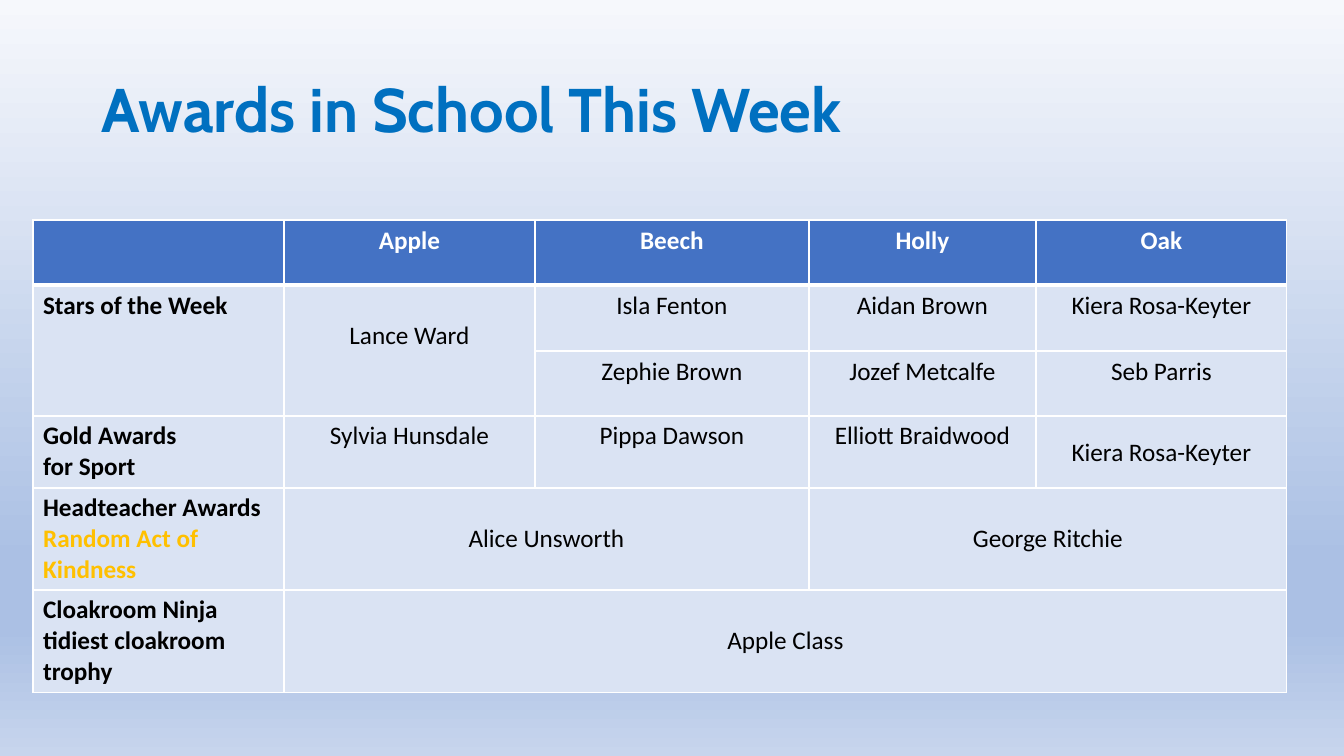
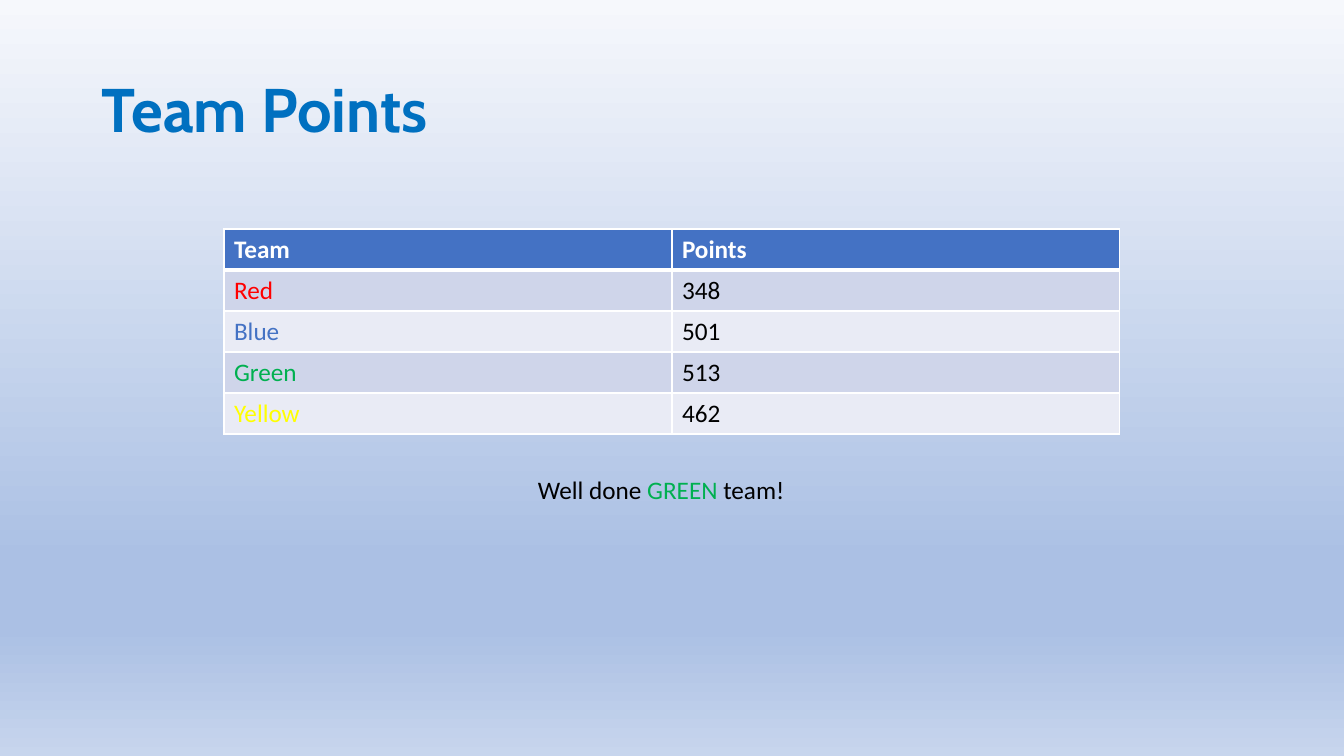
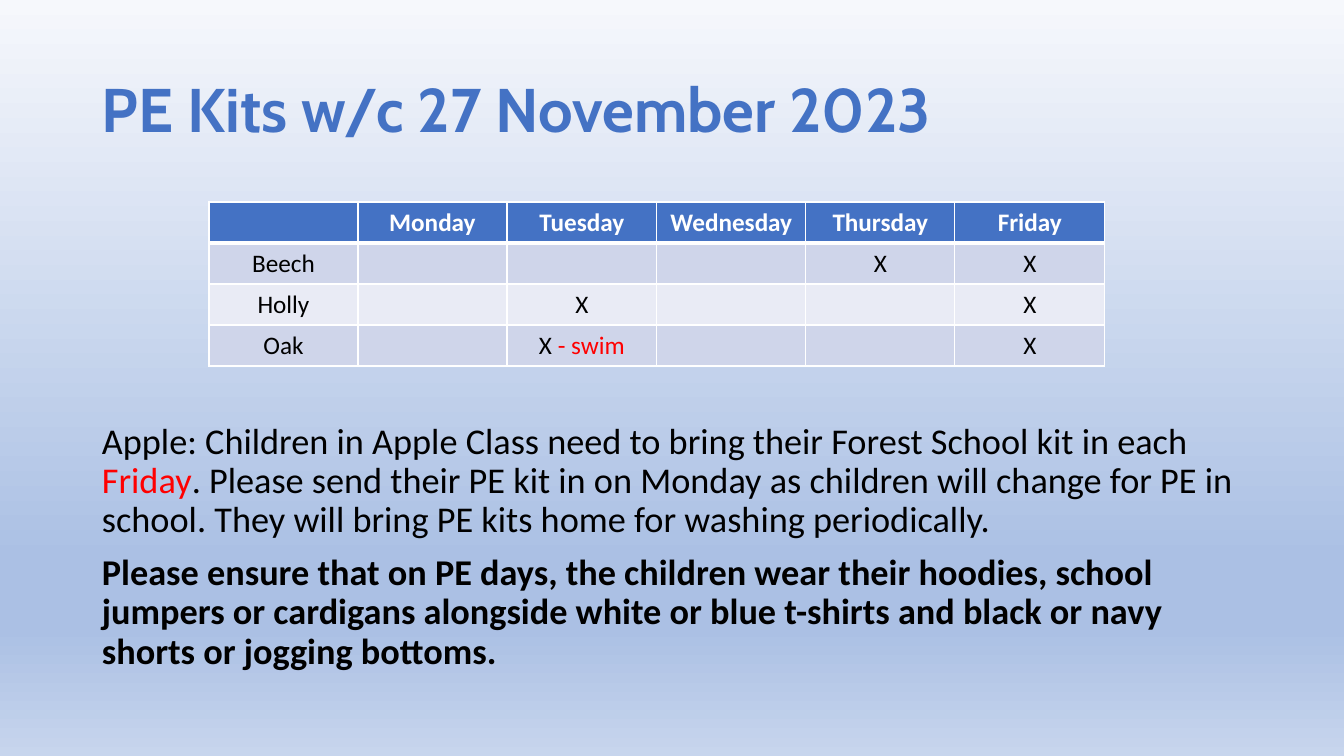
from copy import deepcopy
from dataclasses import dataclass
from typing import Optional

from lxml.etree import SubElement
from pptx import Presentation
from pptx.dml.color import RGBColor
from pptx.enum.text import MSO_ANCHOR as Anchor, PP_ALIGN as Align
from pptx.oxml.ns import qn
from pptx.util import Emu, Pt

SLIDE_W, SLIDE_H = 1344, 756
EMU_PER_PX = 12192000 / SLIDE_W

WHITE = RGBColor(0xFF, 0xFF, 0xFF)
BLACK = RGBColor(0x00, 0x00, 0x00)
RED = RGBColor(0xFF, 0x00, 0x00)
GREEN = RGBColor(0x00, 0xB0, 0x50)
YELLOW = RGBColor(0xFF, 0xFF, 0x00)
GOLD = RGBColor(0xFF, 0xC0, 0x00)
BLUE = RGBColor(0x44, 0x72, 0xC4)
TITLE_BLUE = RGBColor(0x00, 0x70, 0xC0)
PALE_BLUE = RGBColor(0xDA, 0xE3, 0xF3)
BAND_DARK = RGBColor(0xCF, 0xD5, 0xEA)
BAND_LIGHT = RGBColor(0xE9, 0xEB, 0xF5)
SKY = (
    (0, RGBColor(0xF6, 0xF8, 0xFC)),
    (74, RGBColor(0xAB, 0xC0, 0xE4)),
    (83, RGBColor(0xAB, 0xC0, 0xE4)),
    (100, RGBColor(0xC7, 0xD5, 0xED)),
)
TITLE_FONT, BODY_FONT = "Cabin", "Calibri"


@dataclass(frozen=True)
class Run:
    text: str
    color: RGBColor = BLACK


@dataclass(frozen=True)
class Para:
    runs: tuple[Run, ...]
    size: float = 18
    bold: bool = False
    font: str = BODY_FONT
    align: Align = Align.LEFT
    spacing: Optional[float] = None
    before: Optional[float] = None


@dataclass(frozen=True)
class Box:
    x: int
    y: int
    w: int
    h: int


@dataclass(frozen=True)
class Cell:
    paras: tuple[Para, ...] = ()
    drop: int = 0
    rows: int = 1
    cols: int = 1


@dataclass(frozen=True)
class Grid:
    x: int
    y: int
    cols: tuple[int, ...]
    rows: tuple[int, ...]
    cells: list[list[Optional[Cell]]]
    bands: tuple[RGBColor, ...]
    first_col: bool = False


TITLE_BOX = Box(92, 40, 1159, 146)


def px(n: int) -> Emu:
    return Emu(round(n * EMU_PER_PX))


def write(tf, paras: tuple[Para, ...]) -> None:
    for i, para in enumerate(paras):
        p = tf.paragraphs[0] if i == 0 else tf.add_paragraph()
        p.alignment = para.align
        p.font.name, p.font.size, p.font.bold = para.font, Pt(para.size), para.bold
        if para.spacing:
            p.line_spacing = para.spacing
        if para.before:
            p.space_before = Pt(para.before)
        for run in para.runs:
            r = p.add_run()
            r.text = run.text
            r.font.color.rgb = run.color


def add_text(s, box: Box, *paras: Para, anchor: Anchor = Anchor.TOP) -> None:
    sp = s.shapes.add_textbox(px(box.x), px(box.y), px(box.w), px(box.h))
    tf = sp.text_frame
    tf.word_wrap = True
    tf.vertical_anchor = anchor
    write(tf, paras)


def add_slide(prs, title: str, color: RGBColor = TITLE_BLUE):
    s = prs.slides.add_slide(prs.slide_layouts[6])
    heading = Para((Run(title, color),), 44, True, TITLE_FONT, spacing=0.9)
    add_text(s, TITLE_BOX, heading, anchor=Anchor.MIDDLE)
    return s


def set_borders(cell, top: int, bottom: int) -> None:
    tc_pr = cell._tc.get_or_add_tcPr()
    for side, width in (("L", 1), ("R", 1), ("T", top), ("B", bottom)):
        ln = SubElement(tc_pr, qn(f"a:ln{side}"), w=str(Pt(width)))
        fill = SubElement(ln, qn("a:solidFill"))
        SubElement(fill, qn("a:srgbClr"), val=str(WHITE))


def add_grid(s, grid: Grid) -> None:
    frame = s.shapes.add_table(
        len(grid.rows), len(grid.cols), px(grid.x), px(grid.y),
        px(sum(grid.cols)), px(sum(grid.rows)),
    )
    table = frame.table
    table.horz_banding = False
    table.first_col = grid.first_col
    for col, w in zip(table.columns, grid.cols):
        col.width = px(w)
    for row, h in zip(table.rows, grid.rows):
        row.height = px(h)
    for i, line in enumerate(grid.cells):
        for j, item in enumerate(line):
            cell = table.cell(i, j)
            set_borders(cell, 3 if i == 1 else 1, 3 if i == 0 else 1)
            cell.fill.solid()
            cell.fill.fore_color.rgb = BLUE if i == 0 else grid.bands[(i - 1) % len(grid.bands)]
            if item is None:
                continue
            if item.rows * item.cols > 1:
                cell.merge(table.cell(i + item.rows - 1, j + item.cols - 1))
            if item.drop:
                cell.margin_top = px(5 + item.drop)
            write(cell.text_frame, item.paras)


def head(text: str, align: Align = Align.CENTER) -> Cell:
    return Cell((Para((Run(text, WHITE),), bold=True, align=align),) if text else ())


def label(*lines: tuple[Run, ...]) -> Cell:
    return Cell(tuple(Para(runs, bold=True) for runs in lines))


def mid(*runs: Run, drop: int = 0, rows: int = 1, cols: int = 1) -> Cell:
    return Cell((Para(runs, align=Align.CENTER),) if runs else (), drop, rows, cols)


def name(text: str, drop: int = 0, rows: int = 1, cols: int = 1) -> Cell:
    return mid(Run(text), drop=drop, rows=rows, cols=cols)


def left(text: str, color: RGBColor = BLACK) -> Cell:
    return Cell((Para((Run(text, color),)),))


def set_background(prs) -> None:
    fill = prs.slide_master.background.fill
    fill.gradient()
    fill.gradient_angle = 270
    stops = prs.slide_master.element.find(".//" + qn("p:bg")).find(".//" + qn("a:gsLst"))
    for stop in list(stops):
        stops.remove(stop)
    for pos, color in SKY:
        gs = SubElement(stops, qn("a:gs"), pos=str(pos * 1000))
        SubElement(gs, qn("a:srgbClr"), val=str(color))


def awards_slide(prs) -> None:
    s = add_slide(prs, "Awards in School This Week")
    stars = label((Run("Stars of the Week"),))
    cells = [
        [head(t) for t in ("", "Apple", "Beech", "Holly", "Oak")],
        [Cell(stars.paras, rows=2), name("Lance Ward", 31, rows=2),
         name("Isla Fenton"), name("Aidan Brown"), name("Kiera Rosa-Keyter")],
        [None, None, name("Zephie Brown"), name("Jozef Metcalfe"), name("Seb Parris")],
        [label((Run("Gold Awards"),), (Run("for Sport"),)), name("Sylvia Hunsdale"),
         name("Pippa Dawson"), name("Elliott Braidwood"), name("Kiera Rosa-Keyter", 17)],
        [label((Run("Headteacher Awards "), Run("Random Act of Kindness", GOLD))),
         name("Alice Unsworth", 31, cols=2), None, name("George Ritchie", 31, cols=2), None],
        [label((Run("Cloakroom Ninja tidiest cloakroom trophy"),)),
         name("Apple Class", 31, cols=4), None, None, None],
    ]
    add_grid(s, Grid(33, 220, (251, 251, 274, 227, 251), (65, 66, 65, 72, 102, 103),
                     cells, (PALE_BLUE,), first_col=True))


def points_slide(prs) -> None:
    s = add_slide(prs, "Team Points")
    scores = (("Red", RED, 348), ("Blue", BLUE, 501), ("Green", GREEN, 513), ("Yellow", YELLOW, 462))
    cells = [[head(t, Align.LEFT) for t in ("Team", "Points")]]
    cells += [[left(team, color), left(str(points))] for team, color, points in scores]
    add_grid(s, Grid(224, 229, (448,) * 2, (41,) * 5, cells, (BAND_DARK, BAND_LIGHT)))
    add_text(s, Box(528, 469, 287, 40),
             Para((Run("Well done "), Run("GREEN", GREEN), Run(" team!"))))


def kits_slide(prs) -> None:
    s = add_slide(prs, "PE Kits w/c 27 November 2023", BLUE)
    days = ("Monday", "Tuesday", "Wednesday", "Thursday", "Friday")
    x = (Run("X"),)
    swim = (Run("X "), Run("- swim", RED))
    kits = {
        "Beech": {"Thursday": x, "Friday": x},
        "Holly": {"Tuesday": x, "Friday": x},
        "Oak": {"Tuesday": swim, "Friday": x},
    }
    cells = [[head(t) for t in ("", *days)]]
    cells += [[name(group), *(mid(*marks.get(day, ())) for day in days)]
              for group, marks in kits.items()]
    add_text(
        s, Box(92, 418, 1159, 263),
        Para((Run("Apple: Children in Apple Class need to bring their Forest School kit in each "),
              Run("Friday", RED),
              Run(". Please send their PE kit in on Monday as children will change for PE in school. "
                  "They will bring PE kits home for washing periodically.")),
             25.9, spacing=0.9),
        Para((Run("Please ensure that on PE days, the children wear their hoodies, school jumpers or "
                  "cardigans alongside white or blue t-shirts and black or navy shorts or jogging "
                  "bottoms."),),
             25.9, True, spacing=0.9, before=10),
    )
    add_grid(s, Grid(209, 202, (149, 149, 150) * 2, (41,) * 4, cells, (BAND_DARK, BAND_LIGHT)))


def main() -> None:
    prs = Presentation()
    prs.slide_width, prs.slide_height = px(SLIDE_W), px(SLIDE_H)
    set_background(prs)
    awards_slide(prs)
    points_slide(prs)
    kits_slide(prs)
    prs.save("out.pptx")


if __name__ == "__main__":
    main()
